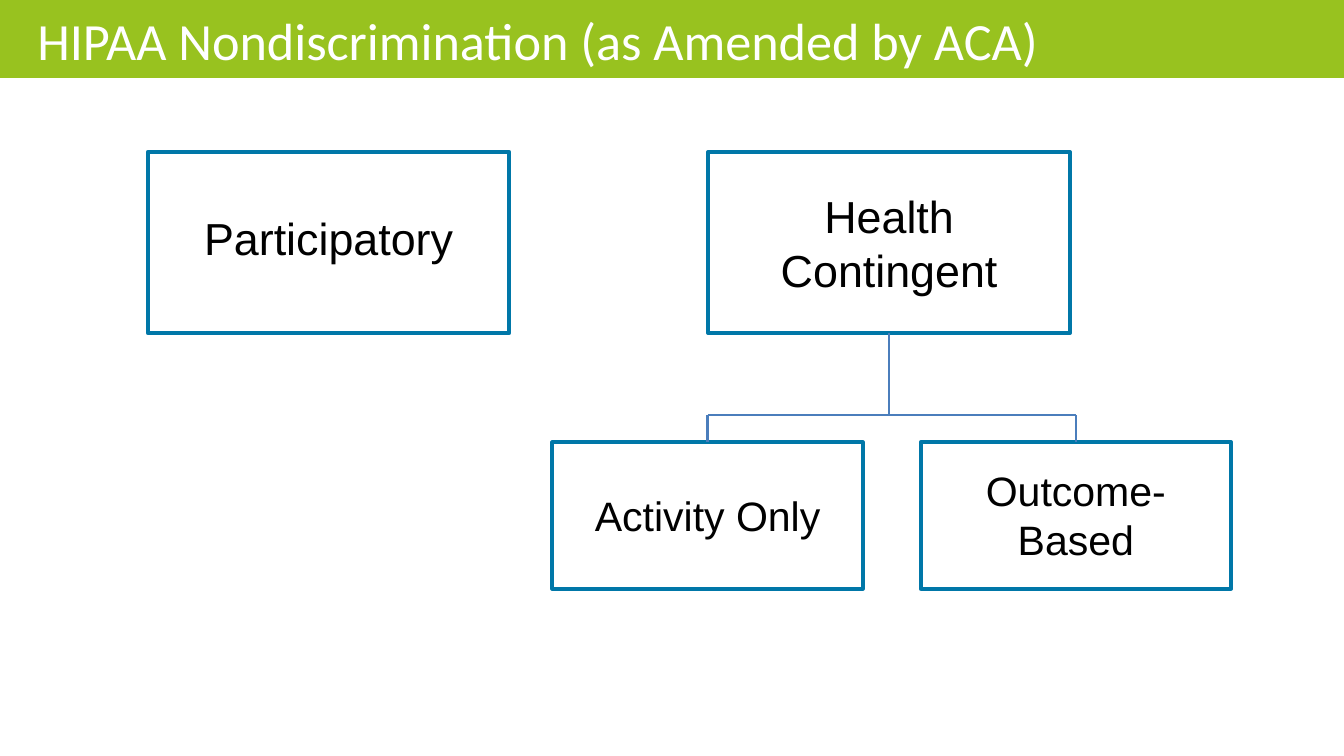
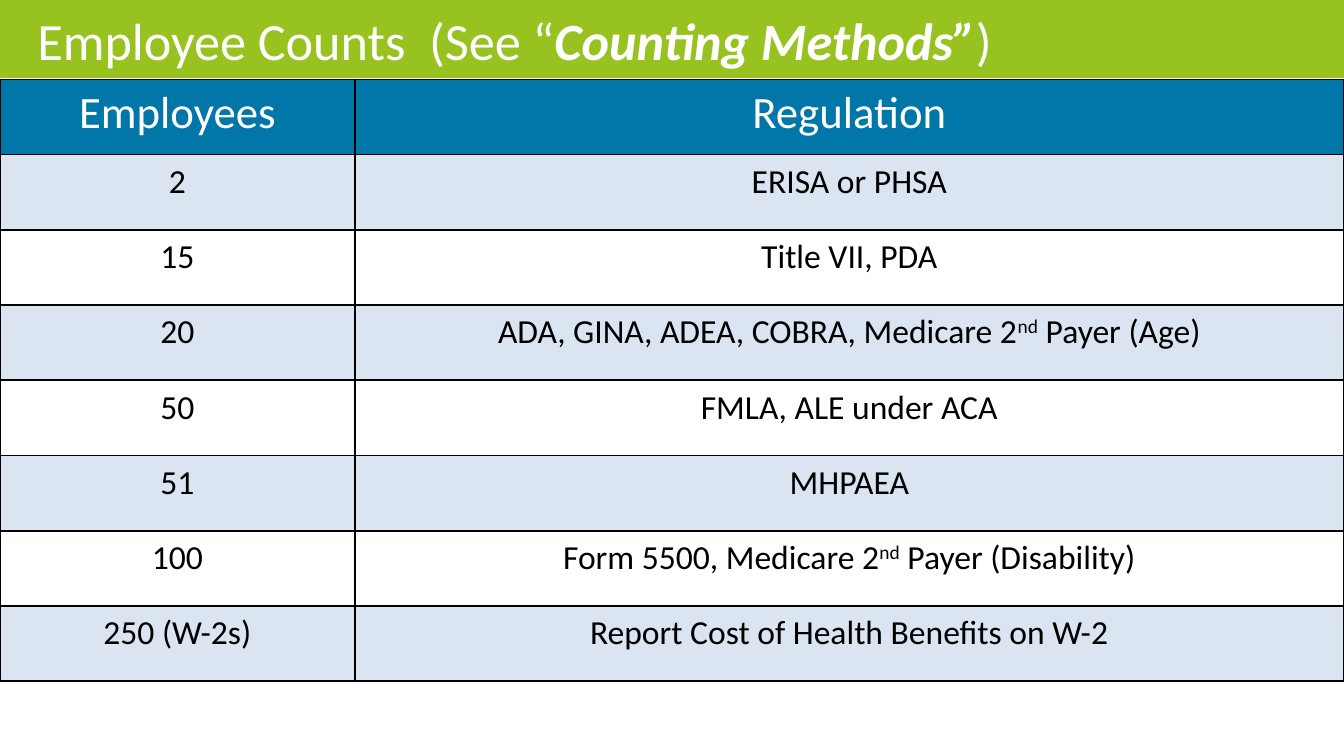
"""Build two slides on wellness plan categories and employee count thresholds."""
from lxml import etree
from pptx import Presentation
from pptx.dml.color import RGBColor
from pptx.enum.shapes import MSO_CONNECTOR, MSO_SHAPE
from pptx.enum.text import MSO_ANCHOR, PP_ALIGN
from pptx.oxml import parse_xml
from pptx.oxml.ns import nsdecls, qn
from pptx.util import Inches, Pt

RECT, STRAIGHT = MSO_SHAPE.RECTANGLE, MSO_CONNECTOR.STRAIGHT
LEFT, CENTER = PP_ALIGN.LEFT, PP_ALIGN.CENTER
TOP, MIDDLE = MSO_ANCHOR.TOP, MSO_ANCHOR.MIDDLE

GREEN = RGBColor(0x98, 0xC2, 0x1F)
TEAL = RGBColor(0x00, 0x77, 0xA8)
BRANCH_BLUE = RGBColor(0x4B, 0x7E, 0xBC)
STRIPE_BLUE = RGBColor(0x4F, 0x81, 0xBD)
WHITE = RGBColor(0xFF, 0xFF, 0xFF)
BLACK = RGBColor(0x00, 0x00, 0x00)

BOLD_ITALIC = {"bold": True, "italic": True}
SUPER = {"baseline": 30000}

PLAN_TITLE = ["HIPAA Nondiscrimination (as Amended by ACA)"]
PLANS = [
    {"name": "Participatory", "size": 24,
     "box": (1.1, 1.13, 2.69, 1.35), "label": (1.15, 1.52, 2.59, 0.5)},
    {"name": "Health Contingent", "size": 24,
     "box": (5.27, 1.13, 2.69, 1.35), "label": (5.32, 1.35, 2.59, 0.91)},
    {"name": "Activity Only", "size": 22,
     "box": (4.11, 3.29, 2.31, 1.09), "label": (4.11, 3.6, 2.31, 0.47)},
    {"name": "Outcome-Based", "size": 22,
     "box": (6.85, 3.29, 2.31, 1.09), "label": (6.85, 3.41, 2.31, 0.84)},
]
PARENT, CHILDREN = PLANS[1], PLANS[2:]
BRANCH_Y = 3.09

COUNT_TITLE = ["Employee Counts  (See “", ("Counting Methods”", BOLD_ITALIC), ")"]
COUNTS = [
    (["Employees"], ["Regulation"]),
    (["2"], ["ERISA or PHSA"]),
    (["15"], ["Title VII, PDA"]),
    (["20"], ["ADA, GINA, ADEA, COBRA, Medicare 2", ("nd", SUPER), " Payer (Age)"]),
    (["50"], ["FMLA, ALE under ACA"]),
    (["51"], ["MHPAEA"]),
    (["100"], ["Form 5500, Medicare 2", ("nd", SUPER), " Payer (Disability)"]),
    (["250 (W-2s)"], ["Report Cost of Health Benefits on W-2"]),
]
COL_WIDTHS = [2.64, 7.36]
ROW_HEIGHT = 0.56


def write(tf, runs, size, font="Calibri", color=BLACK, align=CENTER):
    """Write plain or (text, format) runs into the first paragraph."""
    tf.word_wrap = True
    p = tf.paragraphs[0]
    p.alignment = align
    for run in runs:
        text, fmt = (run, {}) if isinstance(run, str) else run
        r = p.add_run()
        r.text = text
        r.font.size, r.font.name = Pt(size), font
        r.font.color.rgb = color
        r.font.bold, r.font.italic = fmt.get("bold"), fmt.get("italic")
        if "baseline" in fmt:
            r.font._element.set("baseline", str(fmt["baseline"]))


def add_rect(s, box, fill=None, line=None):
    """Add a flat rectangle."""
    sp = s.shapes.add_shape(RECT, *map(Inches, box))
    sp.shadow.inherit = False
    if fill is None:
        sp.fill.background()
    else:
        sp.fill.solid()
        sp.fill.fore_color.rgb = fill
    if line is None:
        sp.line.fill.background()
    else:
        sp.line.color.rgb, sp.line.width = line, Pt(2)


def add_text(s, box, runs, size, anchor=TOP, **fmt):
    """Add a text box."""
    tf = s.shapes.add_textbox(*map(Inches, box)).text_frame
    tf.vertical_anchor = anchor
    write(tf, runs, size, **fmt)


def add_line(s, *ends):
    """Add one thin branch of the tree."""
    c = s.shapes.add_connector(STRAIGHT, *map(Inches, ends))
    c.line.color.rgb, c.line.width = BRANCH_BLUE, Pt(1.25)
    etree.SubElement(c._element.spPr, qn("a:effectLst"))


def add_slide(prs, title):
    """Add a slide with the green title band."""
    s = prs.slides.add_slide(prs.slide_layouts[6])
    add_rect(s, (0, 0, 10, 0.58), fill=GREEN)
    add_text(s, (0.18, 0.01, 8.6, 0.57), title, 28, color=WHITE, align=LEFT)
    return s


def format_cell(cell, fill=None, alpha=None):
    """Set the black borders and the fill of a table cell."""
    tcPr = cell._tc.get_or_add_tcPr()
    for side in ("lnL", "lnR", "lnT", "lnB"):
        tcPr.append(parse_xml(
            f'<a:{side} {nsdecls("a")} w="{Pt(1)}"><a:solidFill>'
            f'<a:srgbClr val="{BLACK}"/></a:solidFill></a:{side}>'))
    if fill is None:
        cell.fill.background()
        return
    cell.fill.solid()
    cell.fill.fore_color.rgb = fill
    if alpha:
        clr = tcPr.find(qn("a:solidFill")).find(qn("a:srgbClr"))
        etree.SubElement(clr, qn("a:alpha")).set("val", str(alpha * 1000))


def build_plans(prs):
    """Draw the plan types as a small tree."""
    s = add_slide(prs, PLAN_TITLE)
    for plan in PLANS:
        add_rect(s, plan["box"], line=TEAL)
        add_text(s, plan["label"], [plan["name"]], plan["size"], anchor=MIDDLE, font="Arial")
    centers = []
    for child in CHILDREN:
        x, y, w, _ = child["box"]
        centers.append(x + w / 2)
        add_line(s, centers[-1], y, centers[-1], BRANCH_Y)
    add_line(s, centers[0], BRANCH_Y, centers[-1], BRANCH_Y)
    x, y, w, h = PARENT["box"]
    add_line(s, x + w / 2, y + h, x + w / 2, BRANCH_Y)


def build_counts(prs):
    """Draw the table of employee thresholds."""
    s = add_slide(prs, COUNT_TITLE)
    frame = s.shapes.add_table(len(COUNTS), len(COL_WIDTHS), Inches(0), Inches(0.59),
                               Inches(sum(COL_WIDTHS)), Inches(ROW_HEIGHT * len(COUNTS)))
    table = frame.table
    table.horz_banding = False
    for column, width in zip(table.columns, COL_WIDTHS):
        column.width = Inches(width)
    for i, row in enumerate(COUNTS):
        table.rows[i].height = Inches(ROW_HEIGHT)
        for j, runs in enumerate(row):
            cell = table.cell(i, j)
            if i == 0:
                format_cell(cell, TEAL)
                write(cell.text_frame, runs, 24, color=WHITE)
            else:
                format_cell(cell, STRIPE_BLUE if i % 2 else None, alpha=20)
                write(cell.text_frame, runs, 18)


def main():
    """Build and save the deck."""
    prs = Presentation()
    prs.slide_width = Inches(10)
    prs.slide_height = prs.slide_width * 9 // 16
    build_plans(prs)
    build_counts(prs)
    prs.save("out.pptx")


if __name__ == "__main__":
    main()
